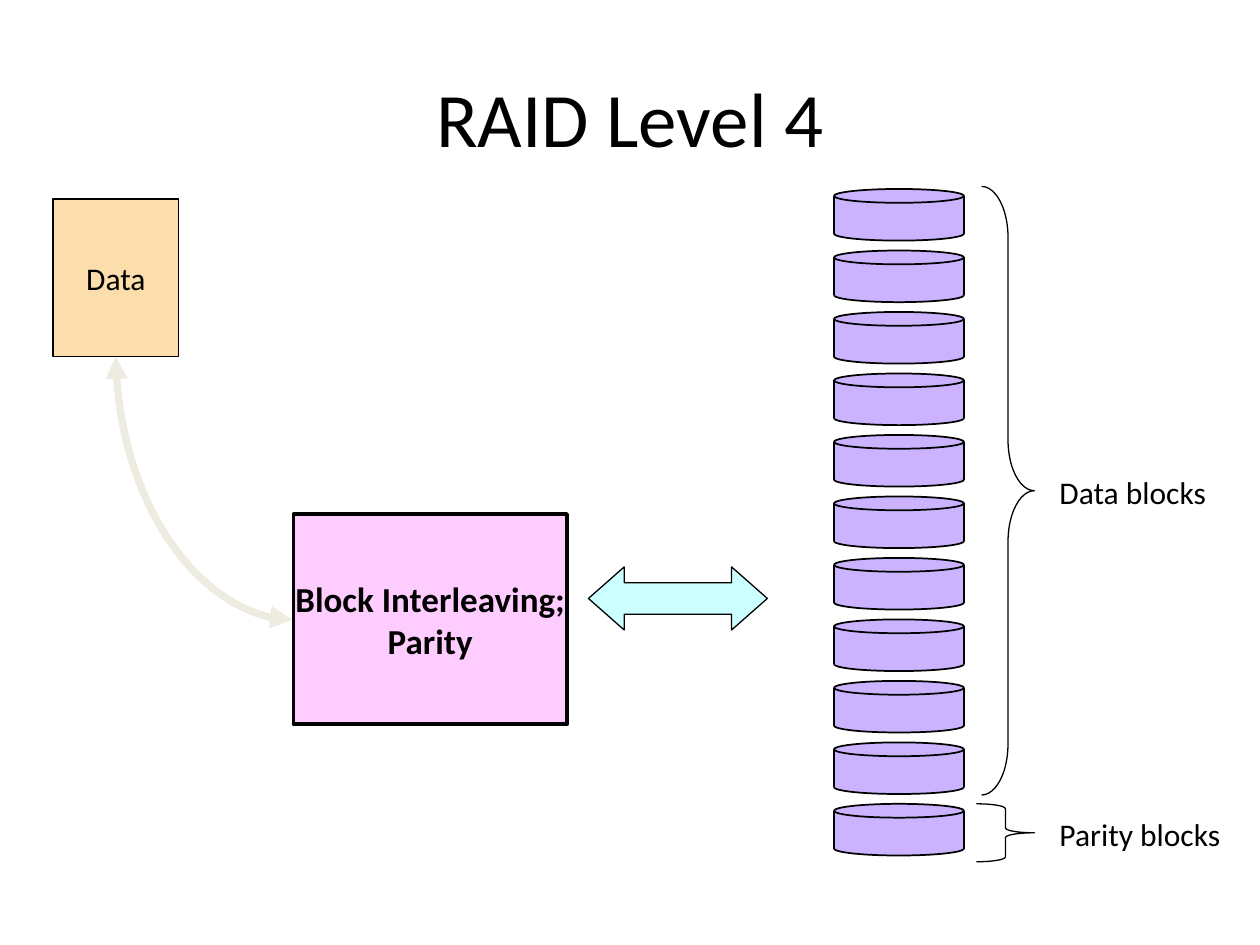
from dataclasses import dataclass

from lxml.etree import SubElement
from pptx import Presentation
from pptx.dml.color import RGBColor
from pptx.enum.shapes import MSO_CONNECTOR as LINE, MSO_SHAPE as SHAPE
from pptx.enum.text import MSO_ANCHOR as ANCHOR, PP_ALIGN as ALIGN
from pptx.oxml.ns import qn
from pptx.util import Inches, Pt


@dataclass(frozen=True)
class Theme:
    """Colours, type sizes and line widths of the slide."""
    font: str = "Calibri"
    ink: str = "000000"
    disk: str = "CCB3FF"
    controller: str = "FFCCFF"
    data: str = "FBDEAB"
    transfer: str = "CCFFFF"
    flow: str = "EEECE1"
    title_size: float = 44
    controller_size: float = 20
    label_size: float = 18
    thin: float = 0.75
    disk_line: float = 1
    bold_line: float = 2.25
    flow_line: float = 4.25


@dataclass(frozen=True)
class Box:
    """A rectangle in inches."""
    left: float
    top: float
    width: float
    height: float

    @property
    def lengths(self):
        """Return the rectangle as slide lengths."""
        return [Inches(side) for side in (self.left, self.top, self.width, self.height)]


THEME = Theme()


def write_text(frame, text, size, bold=False, align=ALIGN.LEFT, anchor=ANCHOR.TOP, wrap=True):
    """Fill a text frame with one paragraph per line of text."""
    frame.word_wrap = wrap
    frame.vertical_anchor = anchor
    for index, line in enumerate(text.split("\n")):
        para = frame.add_paragraph() if index else frame.paragraphs[0]
        para.alignment = align
        span = para.add_run()
        span.text = line
        span.font.name = THEME.font
        span.font.size = Pt(size)
        span.font.bold = bold
        span.font.color.rgb = RGBColor.from_string(THEME.ink)


def add_label(page, box, text, size=THEME.label_size, **style):
    """Place free text in a box."""
    write_text(page.shapes.add_textbox(*box.lengths).text_frame, text, size, **style)


def add_figure(page, box, kind, fill=None, width=None, adjustments=()):
    """Place a preset shape with an optional fill and outline."""
    shape = page.shapes.add_shape(kind, *box.lengths)
    shape.shadow.inherit = False
    for index, value in enumerate(adjustments):
        shape.adjustments[index] = value
    if fill:
        shape.fill.solid()
        shape.fill.fore_color.rgb = RGBColor.from_string(fill)
    else:
        shape.fill.background()
    if width:
        shape.line.width = Pt(width)
        shape.line.color.rgb = RGBColor.from_string(THEME.ink)
    else:
        shape.line.fill.background()
    return shape


def add_line(page, box, color, width, kind=LINE.STRAIGHT):
    """Draw a connector from the top left to the bottom right of a box."""
    right, bottom = box.left + box.width, box.top + box.height
    ends = [Inches(side) for side in (box.left, box.top, right, bottom)]
    line = page.shapes.add_connector(kind, *ends)
    line.line.width = Pt(width)
    line.line.color.rgb = RGBColor.from_string(color)
    SubElement(line._element.spPr, qn("a:effectLst"))
    return line


def add_panel(page, box, text, fill, width, size, bold=False):
    """Draw a filled rectangle with centred text."""
    panel = add_figure(page, box, SHAPE.RECTANGLE, fill, width)
    write_text(panel.text_frame, text, size, bold, ALIGN.CENTER, ANCHOR.MIDDLE, wrap=False)


def add_flow(page, box):
    """Draw the curved double arrow from the bottom right to the top left of a box."""
    flow = add_line(page, box, THEME.flow, THEME.flow_line, LINE.CURVE)
    properties = flow._element.spPr
    properties.find(qn("a:xfrm")).set("rot", "10800000")
    properties.find(qn("a:prstGeom")).set("prst", "curvedConnector2")
    outline = properties.find(qn("a:ln"))
    for end in ("a:headEnd", "a:tailEnd"):
        SubElement(outline, qn(end), type="triangle")


def add_disk(page, box):
    """Draw one disk as two ellipses, a body and two side lines."""
    rim = 0.11
    body = Box(box.left, box.top + rim / 2, box.width, box.height - rim)
    lower = Box(box.left, box.top + box.height - rim, box.width, rim)
    upper = Box(box.left, box.top, box.width, rim)
    add_figure(page, lower, SHAPE.OVAL, THEME.disk, THEME.disk_line)
    add_figure(page, body, SHAPE.RECTANGLE, THEME.disk)
    add_figure(page, upper, SHAPE.OVAL, THEME.disk, THEME.disk_line)
    for side in (box.left, box.left + box.width):
        add_line(page, Box(side, body.top, 0, body.height), THEME.ink, THEME.disk_line)


def add_disk_stack(page, box, count=11, disk_height=0.41):
    """Spread disks evenly down a box."""
    pitch = (box.height - disk_height) / (count - 1)
    for index in range(count):
        add_disk(page, Box(box.left, box.top + index * pitch, box.width, disk_height))


def add_group_label(page, box, text, curl, label_width):
    """Draw a right brace with a label beside its point."""
    add_figure(page, box, SHAPE.RIGHT_BRACE, width=THEME.thin, adjustments=(curl, 0.5))
    height = 0.4
    middle = box.top + box.height / 2
    label = Box(box.left + box.width + 0.1, middle - height / 2 + 0.01, label_width, height)
    add_label(page, label, text)


def build_raid_slide(page):
    """Lay out the RAID Level 4 diagram."""
    add_label(page, Box(0.5, 0.3, 9, 1.25), "RAID Level 4", THEME.title_size,
              align=ALIGN.CENTER, anchor=ANCHOR.MIDDLE)
    add_disk_stack(page, Box(6.62, 1.5, 1.03, 5.29))
    add_group_label(page, Box(7.79, 1.48, 0.42, 4.83), "Data blocks", 0.967, 1.52)
    add_group_label(page, Box(7.75, 6.38, 0.46, 0.46), "Parity blocks", 0.083, 1.69)
    add_panel(page, Box(2.33, 4.08, 2.17, 1.67), "Block Interleaving;\nParity",
              THEME.controller, THEME.bold_line, THEME.controller_size, bold=True)
    add_flow(page, Box(0.92, 2.83, 1.4, 2.09))
    add_panel(page, Box(0.42, 1.58, 1, 1.25), "Data", THEME.data, THEME.thin, THEME.label_size)
    add_figure(page, Box(4.67, 4.5, 1.42, 0.5), SHAPE.LEFT_RIGHT_ARROW,
               THEME.transfer, THEME.thin, (0.5, 0.567))


def main():
    """Build and save the deck."""
    deck = Presentation()
    deck.slide_width, deck.slide_height = Inches(10), Inches(7.5)
    build_raid_slide(deck.slides.add_slide(deck.slide_layouts[6]))
    deck.save("out.pptx")


if __name__ == "__main__":
    main()
